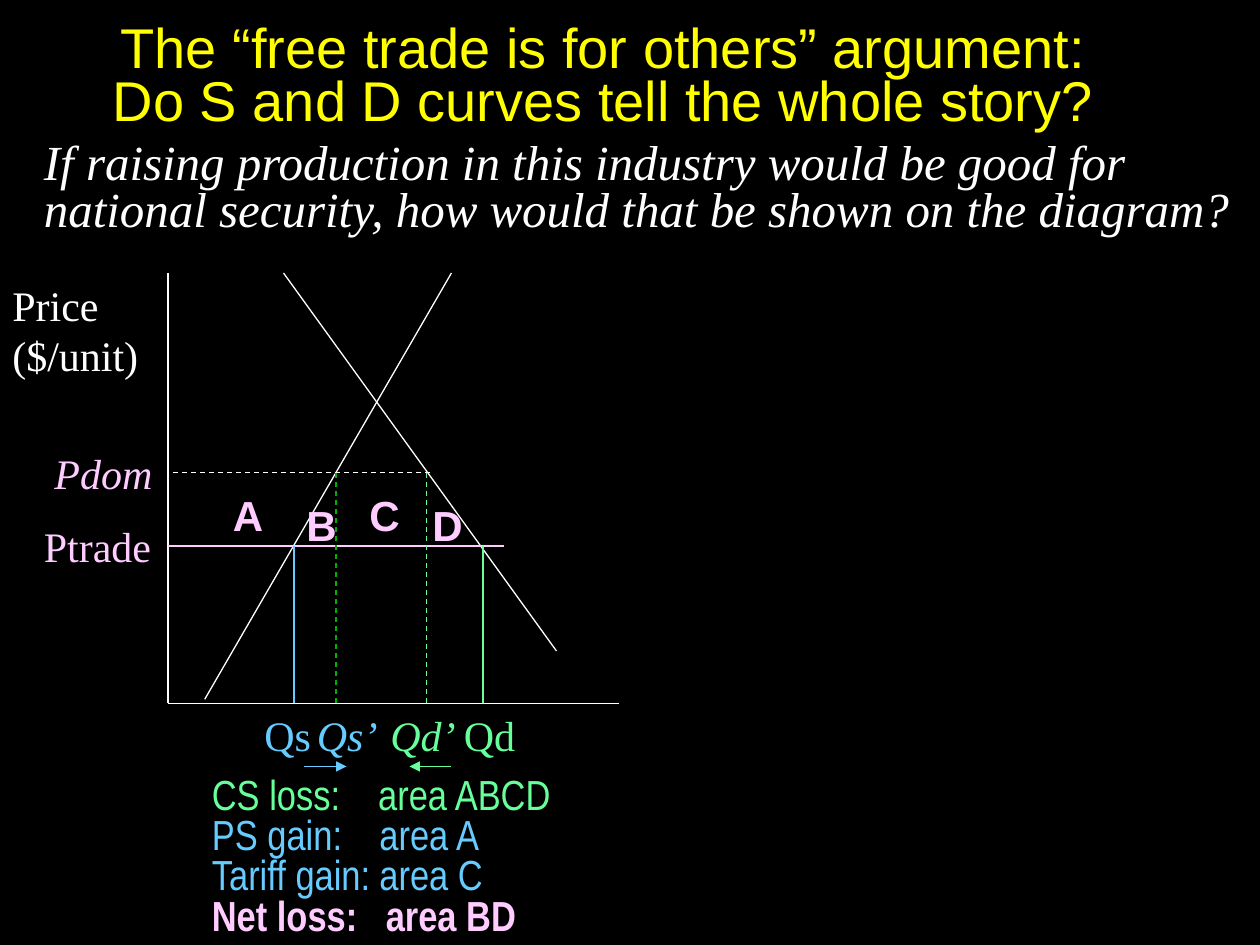
"""Build a supply and demand slide on the welfare effects of a tariff."""
from lxml.etree import SubElement
from pptx import Presentation
from pptx.dml.color import RGBColor
from pptx.enum.dml import MSO_LINE_DASH_STYLE as Dash
from pptx.enum.shapes import MSO_CONNECTOR as Connector
from pptx.enum.text import MSO_ANCHOR as Anchor, MSO_AUTO_SIZE as AutoSize, PP_ALIGN as Align
from pptx.oxml.ns import qn
from pptx.util import Inches, Pt

rgb = RGBColor.from_string
WHITE, YELLOW, PINK = "FFFFFF", "FFFF00", "FFCCFF"
BLUE, MINT, GREEN = "66CCFF", "66FF99", "00B000"
SERIF, SANS, NARROW = "Times New Roman", "Arial", "Arial Narrow"

deck = Presentation()
deck.slide_width, deck.slide_height = Inches(10), Inches(7.5)
cell = deck.slide_width / 120
slide = deck.slides.add_slide(deck.slide_layouts[6])
slide.background.fill.solid()
slide.background.fill.fore_color.rgb = rgb("000000")


def add_box(col, row, cols, rows, wrap=False, grow=True):
    box = slide.shapes.add_textbox(*(round(n * cell) for n in (col, row, cols, rows)))
    box.text_frame.word_wrap = wrap
    box.text_frame.auto_size = AutoSize.SHAPE_TO_FIT_TEXT if grow else AutoSize.NONE
    return box.text_frame


def add_run(paragraph, text, face, size, color, bold=False, italic=False):
    run = paragraph.add_run()
    run.text = text
    font = run.font
    font.name, font.size, font.bold, font.italic = face, Pt(size), bold, italic
    font.color.rgb = rgb(color)


left, top, base = 16, 26, 67
world_price, tariff_price = 52, 45
supply, supply_tariff, demand_tariff, demand = 28, 32, 40.65, 46

for start, end, color, dashed, arrow in [
    ((left, top), (left, base), WHITE, False, False),
    ((left, base), (59, base), WHITE, False, False),
    ((19.5, 66.6), (43, top), WHITE, False, False),
    ((27, top), (53, 62), WHITE, False, False),
    ((left, world_price), (48, world_price), PINK, False, False),
    ((41, tariff_price), (left, tariff_price), WHITE, True, False),
    ((supply, world_price), (supply, base), BLUE, False, False),
    ((demand, world_price), (demand, base), MINT, False, False),
    ((supply_tariff, tariff_price), (supply_tariff, base), GREEN, True, False),
    ((demand_tariff, tariff_price), (demand_tariff, base), MINT, True, False),
    ((39, 73), (43, 73), MINT, False, True),
    ((33, 73), (29, 73), BLUE, False, True),
]:
    curve = slide.shapes.add_connector(
        Connector.STRAIGHT, *(round(n * cell) for n in start + end))
    curve.line.color.rgb = rgb(color)
    curve.line.width = Pt(0.75)
    if dashed:
        curve.line.dash_style = Dash.DASH
    properties = curve._element.spPr
    if arrow:
        SubElement(properties.find(qn("a:ln")), qn("a:headEnd"), type="triangle")
    SubElement(properties, qn("a:effectLst"))

for label, col, row, cols, color, italic in [
    ("Qd", 43, base, 7.4, MINT, False),
    ("Qs", 24, base, 7, BLUE, False),
    ("Qd’", 36, base, 8.7, MINT, True),
    ("Qs’", 29, base, 8.3, BLUE, True),
    ("Ptrade", 3, 49, 12.7, PINK, False),
    ("Pdom", 4, 42, 11.9, PINK, True),
]:
    add_run(add_box(col, row, cols, 6).paragraphs[0], label, SERIF, 24, color, italic=italic)

for area, col, row in [("A", 21, 46), ("B", 28, 47), ("C", 34, 46), ("D", 40, 47)]:
    add_run(add_box(col, row, 5.3, 6).paragraphs[0], area, SANS, 24, PINK, bold=True)

price_axis = add_box(0, top, 14.4, 10.8)
add_run(price_axis.paragraphs[0], "Price", SERIF, 24, WHITE)
add_run(price_axis.add_paragraph(), "($/unit)", SERIF, 24, WHITE)

welfare = add_box(19, 73.5, 38, 16.5, wrap=True)
for index, (effect, areas, stop, color, bold) in enumerate([
    ("CS loss:", "area ABCD", 1.32, MINT, False),
    ("PS gain:", "area A", 1.33, BLUE, False),
    ("Tariff gain:", "area C", 1.33, BLUE, False),
    ("Net loss:", "area BD", 1.38, PINK, True),
]):
    entry = welfare.add_paragraph() if index else welfare.paragraphs[0]
    entry.line_spacing = 0.8
    tabs = SubElement(entry._p.get_or_add_pPr(), qn("a:tabLst"))
    SubElement(tabs, qn("a:tab"), pos=str(Inches(stop)), algn="l")
    add_run(entry, f"{effect}\t{areas}", NARROW, 24, color, bold=bold)

title = add_box(0, 0, 115, 15, wrap=True, grow=False)
title.vertical_anchor = Anchor.MIDDLE
heading = title.paragraphs[0]
heading.alignment, heading.line_spacing = Align.CENTER, 0.8
add_run(heading, "The “free trade is for others” argument:", SANS, 32, YELLOW)
heading.add_line_break()
add_run(heading, "Do S and D curves tell the whole story?", SANS, 32, YELLOW)

question = add_box(3, 13, 117, 10.2, wrap=True).paragraphs[0]
question.line_spacing = 0.8
add_run(question, "If raising production in this industry would be good for national security, "
        "how would that be shown on the diagram?", SERIF, 28, WHITE, italic=True)

deck.save("out.pptx")
